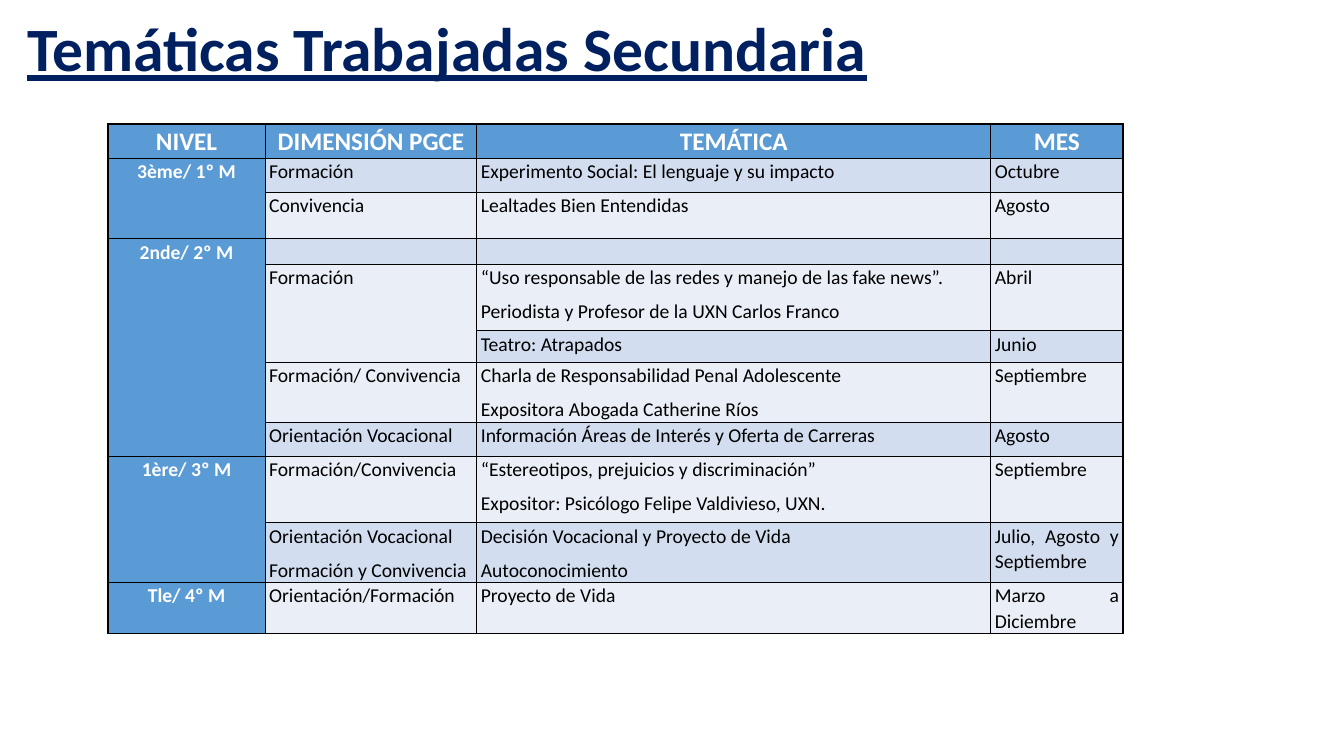
import lxml.etree
import pptx
import pptx.dml.color
import pptx.enum.text
import pptx.oxml.ns
import pptx.util

ALIGN = pptx.enum.text.PP_ALIGN
NAVY, BLUE, BLACK, WHITE = "002060", "5B9BD5", "000000", "FFFFFF"
BANDS = ["EAEFF7", "D2DEEF"]  # even rows, odd rows

# Table content: an empty cell is "", a cell covered by a merge is None
HEADINGS = ["NIVEL", "DIMENSIÓN PGCE", "TEMÁTICA", "MES"]
TOPICS = [
    ["3ème/ 1º M", "Formación", "Experimento Social: El lenguaje y su impacto", "Octubre"],
    [None, "Convivencia", "Lealtades Bien Entendidas", "Agosto"],
    ["2nde/ 2º M", "", "", ""],
    [None, "Formación", "“Uso responsable de las redes y manejo de las fake news”.\n"
     "Periodista y Profesor de la UXN Carlos Franco", "Abril"],
    [None, None, "Teatro: Atrapados", "Junio"],
    [None, "Formación/ Convivencia", "Charla de Responsabilidad Penal Adolescente\n"
     "Expositora Abogada Catherine Ríos", "Septiembre"],
    [None, "Orientación Vocacional", "Información Áreas de Interés y Oferta de Carreras", "Agosto"],
    ["1ère/ 3º M", "Formación/Convivencia", "“Estereotipos, prejuicios y discriminación”\n"
     "Expositor: Psicólogo Felipe Valdivieso, UXN.", "Septiembre"],
    [None, "Orientación Vocacional\nFormación y Convivencia",
     "Decisión Vocacional y Proyecto de Vida\nAutoconocimiento", "Julio, Agosto y Septiembre"],
    ["Tle/ 4º M", "Orientación/Formación", "Proyecto de Vida", "Marzo a Diciembre"],
]

# Widths and heights in hundredths of the slide's width and height
COLUMN_WIDTHS = [11.7, 15.75, 38.25, 9.83]
ROW_HEIGHTS = [4.53, 4.53, 6.13, 3.4, 8.8, 4.2, 7.8, 4.53, 8.8, 7.9, 6.7]


def color(value):
    return pptx.dml.color.RGBColor.from_string(value)


def write_text(frame, text, size=14, fill=BLACK, bold=False, underline=False,
               align=None, spacing=1.07, before=6):
    """Write one paragraph per line of text, all in the same format."""
    for index, line in enumerate(text.split("\n")):
        para = frame.add_paragraph() if index else frame.paragraphs[0]
        para.alignment = align
        para.line_spacing = spacing
        para.space_before = pptx.util.Pt(before)
        if not line:  # an empty cell keeps the height of its font
            para._p.get_or_add_endParaRPr().set("sz", str(size * 100))
            continue
        span = para.add_run()
        span.text = line
        span.font.name = "Calibri"
        span.font.size = pptx.util.Pt(size)
        span.font.bold = bold
        span.font.underline = underline
        span.font.color.rgb = color(fill)


class SlideWriter:
    """Holds the deck, its grid of 100 by 100 units and the current slide."""

    def __init__(self, width=13.33, height=7.5):
        self.deck = pptx.Presentation()
        self.deck.slide_width = pptx.util.Inches(width)
        self.deck.slide_height = pptx.util.Inches(height)
        self.page = self.deck.slides.add_slide(self.deck.slide_layouts[5])

    def across(self, units):
        return round(self.deck.slide_width * units / 100)

    def down(self, units):
        return round(self.deck.slide_height * units / 100)

    def title(self, text, left, top, width, height):
        box = self.page.shapes.title
        box.left, box.top = self.across(left), self.down(top)
        box.width, box.height = self.across(width), self.down(height)
        box.text_frame.word_wrap = True
        box.text_frame.vertical_anchor = pptx.enum.text.MSO_ANCHOR.MIDDLE
        write_text(box.text_frame, text, size=44, fill=NAVY, bold=True,
                   underline=True, align=ALIGN.LEFT, spacing=0.9, before=0)

    def cell(self, cell, text, background, **text_format):
        cell.margin_left = cell.margin_right = pptx.util.Inches(0.04)
        cell.margin_top = cell.margin_bottom = 0
        cell.fill.solid()
        cell.fill.fore_color.rgb = color(background)
        self.borders(cell)
        write_text(cell.text_frame, text, **text_format)

    def borders(self, cell, line=BLACK, points=1):
        properties = cell._tc.get_or_add_tcPr()
        qualified = pptx.oxml.ns.qn
        for index, side in enumerate(["lnL", "lnR", "lnT", "lnB"]):
            edge = lxml.etree.Element(qualified("a:" + side), w=str(int(pptx.util.Pt(points))))
            solid = lxml.etree.SubElement(edge, qualified("a:solidFill"))
            lxml.etree.SubElement(solid, qualified("a:srgbClr"), val=line)
            properties.insert(index, edge)

    def table(self, rows, left, top, widths, heights):
        table = self.page.shapes.add_table(
            len(rows), len(widths), self.across(left), self.down(top),
            self.across(sum(widths)), self.down(sum(heights))).table
        table.first_row = table.horz_banding = False
        for column, width in zip(table.columns, widths):
            column.width = self.across(width)
        for row, height in zip(table.rows, heights):
            row.height = self.down(height)

        # Fill and text: blue headings and levels, banded body
        for r, row in enumerate(rows):
            for c, text in enumerate(row):
                heading = r == 0 or c == 0
                self.cell(table.cell(r, c), text or "",
                          BLUE if heading else BANDS[r % 2],
                          size=18 if r == 0 else 14,
                          fill=WHITE if heading else BLACK, bold=heading,
                          align=ALIGN.CENTER if heading else ALIGN.JUSTIFY)

        # Each cell spans the covered cells right below it
        for c in range(len(widths)):
            for r in range(len(rows)):
                last = r
                while last + 1 < len(rows) and rows[last + 1][c] is None:
                    last += 1
                if rows[r][c] is not None and last > r:
                    table.cell(r, c).merge(table.cell(last, c))


def main():
    writer = SlideWriter()
    writer.title("Temáticas Trabajadas Secundaria", 1.28, -2.8, 96.4, 19.33)
    writer.table([HEADINGS] + TOPICS, 8.03, 16.4, COLUMN_WIDTHS, ROW_HEIGHTS)
    writer.deck.save("out.pptx")


if __name__ == "__main__":
    main()
